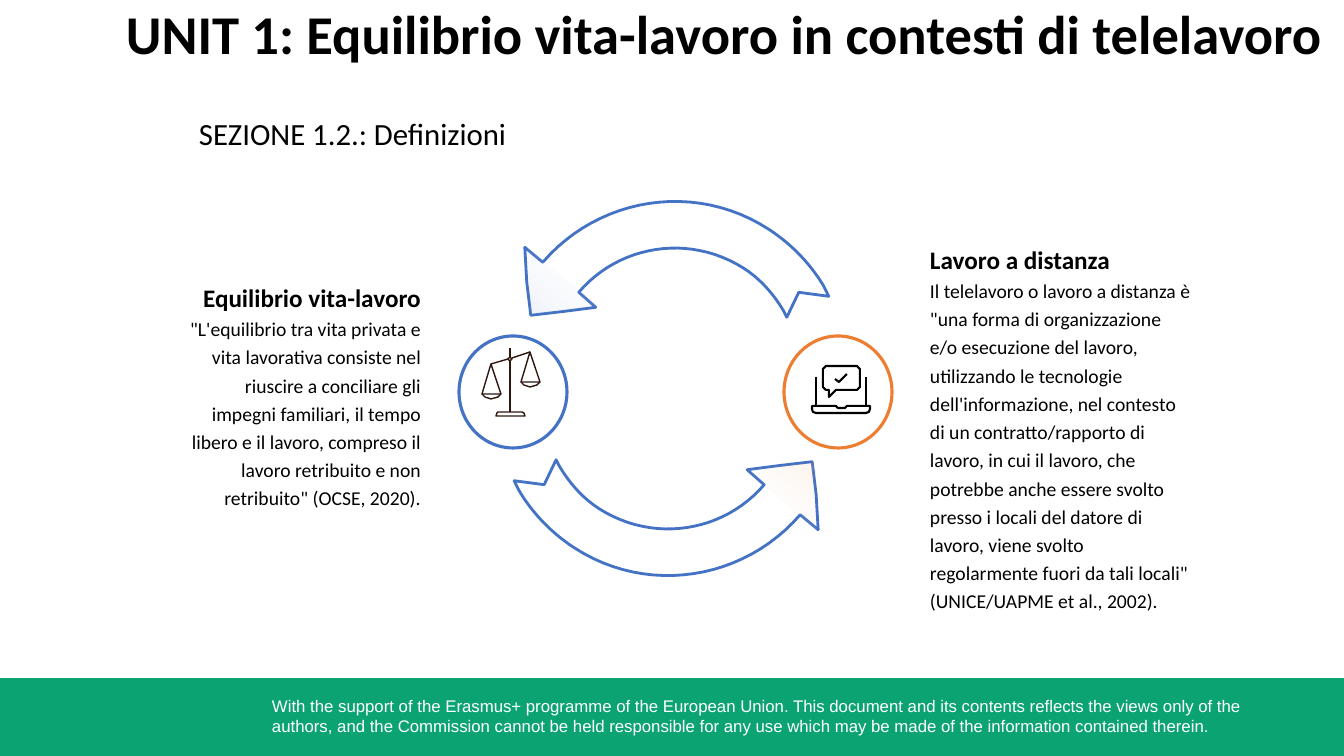
import math
from dataclasses import dataclass

import pptx
import pptx.dml.color
import pptx.enum.shapes
import pptx.enum.text
import pptx.oxml
import pptx.oxml.ns
import pptx.util

RGBColor = pptx.dml.color.RGBColor
SHAPE = pptx.enum.shapes.MSO_SHAPE
ALIGN = pptx.enum.text.PP_ALIGN

BLACK = RGBColor(0x00, 0x00, 0x00)
WHITE = RGBColor(0xFF, 0xFF, 0xFF)
GREEN = RGBColor(0x0C, 0xA3, 0x73)
BLUE = RGBColor(0x44, 0x72, 0xC4)
ORANGE = RGBColor(0xED, 0x7D, 0x31)
BROWN = RGBColor(0x2F, 0x16, 0x0F)

PAGE_WIDTH, PAGE_HEIGHT = 1344, 756
EMU_PER_PX = 12192000 / PAGE_WIDTH
ARROW_ANGLE = 333.1
CURVE_STEPS = 24

Point = tuple[float, float]


@dataclass(frozen=True)
class Definition:
    heading: str
    body: str
    area: tuple[int, int, int, int]
    align: ALIGN


@dataclass(frozen=True)
class Station:
    circle_left: int
    triangle_left: int
    triangle_top: int
    triangle_angle: float
    color: RGBColor


@dataclass(frozen=True)
class Stroke:
    points: list[Point]
    closed: bool = False


DEFINITIONS = [
    Definition(
        "Lavoro a distanza",
        "Il telelavoro o lavoro a distanza è \"una forma di organizzazione e/o esecuzione del lavoro, "
        "utilizzando le tecnologie dell'informazione, nel contesto di un contratto/rapporto di lavoro, "
        "in cui il lavoro, che potrebbe anche essere svolto presso i locali del datore di lavoro, viene "
        "svolto regolarmente fuori da tali locali\" (UNICE/UAPME et al., 2002).",
        (930, 233, 262, 389), ALIGN.LEFT),
    Definition(
        "Equilibrio vita-lavoro",
        "\"L'equilibrio tra vita privata e vita lavorativa consiste nel riuscire a conciliare gli impegni "
        "familiari, il tempo libero e il lavoro, compreso il lavoro retribuito e non retribuito\" "
        "(OCSE, 2020).",
        (186, 271, 235, 246), ALIGN.RIGHT),
]
STATIONS = [Station(459, 501, 271, 220, BLUE), Station(784, 752, 457, 41, ORANGE)]

LAPTOP = [
    Stroke([(816, 377), (816, 406)]),
    Stroke([(866, 377), (866, 406)]),
    Stroke([(812, 406), (836, 406), (838, 408), (845, 408), (847, 406), (870, 406),
            (870, 409), (869, 412), (866, 413), (816, 413), (813, 412), (812, 409)], True),
    Stroke([(826, 366), (857, 366), (860, 369), (860, 387), (857, 390), (836, 390),
            (829, 397), (829, 390), (826, 390), (823, 387), (823, 369)], True),
    Stroke([(835, 379), (839, 382), (847, 374)]),
]
PAN = [(491, 364), (482, 394), (501, 394), (491, 364)]
BOWL = [(482, 394), (485, 397), (491, 399), (498, 397), (501, 394)]
BALANCE = [
    Stroke([(510, 348), (510, 357)]),
    Stroke([(510, 361), (510, 412)]),
    Stroke([(508, 359), (491, 364)]),
    Stroke([(512, 358), (530, 352)]),
    Stroke([(510, 357), (512, 359), (510, 361), (508, 359)], True),
    Stroke([(496, 416), (525, 416), (524, 413), (522, 412), (498, 412), (497, 413)], True),
] + [Stroke([(x + dx, y + dy) for x, y in part])
     for dx, dy in ((0, 0), (39, -12)) for part in (PAN, BOWL)]


def px(length: float) -> int:
    return round(length * EMU_PER_PX)


def curve(start: Point, first: Point, second: Point, end: Point) -> list[Point]:
    points = []
    for step in range(CURVE_STEPS + 1):
        t = step / CURVE_STEPS
        weights = ((1 - t) ** 3, 3 * t * (1 - t) ** 2, 3 * t * t * (1 - t), t ** 3)
        points.append(tuple(sum(w * p[axis] for w, p in zip(weights, (start, first, second, end)))
                            for axis in (0, 1)))
    return points


TOP_ARROW = [
    (527, 282), (525, 247),
    *curve((543, 262), (599, 197), (695, 181), (769, 229)),
    *curve((769, 229), (792, 244), (811, 264), (824, 286)),
    (829, 296), (799, 292), (787, 317),
    *curve((784, 311), (774, 294), (761, 279), (744, 268)),
    *curve((744, 268), (689, 233), (619, 245), (579, 292)),
    (596, 307), (565, 311), (531, 315),
]
BOTTOM_ARROW = [(1343 - x, 777 - y) for x, y in TOP_ARROW]


def turn(points: list[Point], center: Point, degrees: float) -> list[Point]:
    cos, sin = math.cos(math.radians(degrees)), math.sin(math.radians(degrees))
    offsets = [(x - center[0], y - center[1]) for x, y in points]
    return [(center[0] + x * cos - y * sin, center[1] + x * sin + y * cos) for x, y in offsets]


def style(shape, fill: RGBColor | None, line: RGBColor | None = None, weight: float = 1) -> None:
    shape.shadow.inherit = False
    if fill is None:
        shape.fill.background()
    else:
        shape.fill.solid()
        shape.fill.fore_color.rgb = fill
    if line is None:
        shape.line.fill.background()
    else:
        shape.line.color.rgb = line
        shape.line.width = pptx.util.Pt(weight)


def add_preset(page, kind, area: tuple[int, int, int, int], **look):
    shape = page.shapes.add_shape(kind, *map(px, area))
    style(shape, **look)
    return shape


def add_outline(page, strokes: list[Stroke], **look):
    builder = page.shapes.build_freeform(*map(px, strokes[0].points[0]), scale=1.0)
    for index, stroke in enumerate(strokes):
        points = [(px(x), px(y)) for x, y in stroke.points]
        if index:
            builder.move_to(*points[0])
        builder.add_line_segments(points[1:], close=stroke.closed)
    shape = builder.convert_to_shape()
    style(shape, **look)
    return shape


def add_arrow(page, points: list[Point], center: Point) -> None:
    upright = turn(points, center, -ARROW_ANGLE)
    arrow = add_outline(page, [Stroke(upright, True)], fill=WHITE, line=BLUE, weight=2)
    arrow.rotation = ARROW_ANGLE


def add_fading_triangle(page, station: Station) -> None:
    area = (station.triangle_left, station.triangle_top, 91, 49)
    triangle = add_preset(page, SHAPE.ISOSCELES_TRIANGLE, area, fill=None)
    triangle.rotation = station.triangle_angle
    stops = "".join(
        f'<a:gs pos="{position}"><a:srgbClr val="{color}"><a:alpha val="{alpha}"/></a:srgbClr></a:gs>'
        for position, color, alpha in ((0, station.color, 20000), (99000, WHITE, 0), (100000, WHITE, 0)))
    gradient = pptx.oxml.parse_xml(
        f'<a:gradFill {pptx.oxml.ns.nsdecls("a")} rotWithShape="1"><a:gsLst>{stops}</a:gsLst>'
        '<a:lin ang="5400000" scaled="0"/></a:gradFill>')
    properties = triangle.element.spPr
    properties.replace(properties.find(pptx.oxml.ns.qn("a:noFill")), gradient)


def add_text_box(page, area: tuple[int, int, int, int], insets: tuple[int, int, int, int]):
    frame = page.shapes.add_textbox(*map(px, area)).text_frame
    frame.word_wrap = True
    frame.auto_size = pptx.enum.text.MSO_AUTO_SIZE.SHAPE_TO_FIT_TEXT
    frame.margin_left, frame.margin_top, frame.margin_right, frame.margin_bottom = map(px, insets)
    return frame


def write(para, text: str, *, size: float, font: str = "Calibri", color: RGBColor = BLACK,
          bold: bool = False, align: ALIGN = ALIGN.LEFT, spacing: float = 1.0) -> None:
    para.alignment = align
    para.line_spacing = spacing
    span = para.add_run()
    span.text = text
    span.font.size = pptx.util.Pt(size)
    span.font.name = font
    span.font.bold = bold
    span.font.color.rgb = color


def main() -> None:
    deck = pptx.Presentation()
    deck.slide_width, deck.slide_height = px(PAGE_WIDTH), px(PAGE_HEIGHT)
    page = deck.slides.add_slide(deck.slide_layouts[6])

    add_preset(page, SHAPE.RECTANGLE, (0, 678, PAGE_WIDTH, 78), fill=GREEN)
    footer = add_text_box(page, (262, 691, 1050, 50), (10, 5, 10, 5))
    write(footer.paragraphs[0],
          "With the support of the Erasmus+ programme of the European Union. This document and its "
          "contents reflects the views only of the authors, and the Commission cannot be held "
          "responsible for any use which may be made of the information contained therein.",
          size=12, font="Arial", color=WHITE)

    add_arrow(page, TOP_ARROW, (665, 277))
    add_arrow(page, BOTTOM_ARROW, (678, 500))
    for definition in DEFINITIONS:
        frame = add_text_box(page, definition.area, (0, 5, 0, 5))
        write(frame.paragraphs[0], definition.heading, size=18, bold=True,
              align=definition.align, spacing=1.2)
        write(frame.add_paragraph(), definition.body, size=14, align=definition.align, spacing=1.2)
    for station in STATIONS:
        add_fading_triangle(page, station)
        add_preset(page, SHAPE.OVAL, (station.circle_left, 336, 108, 112),
                   fill=None, line=station.color, weight=2.25)
    add_outline(page, LAPTOP, fill=None, line=BLACK, weight=1.5)
    add_outline(page, BALANCE, fill=None, line=BROWN, weight=1)

    section = add_text_box(page, (198, 113, 673, 39), (1, 2, 0, 0))
    write(section.paragraphs[0], "SEZIONE 1.2.: Definizioni", size=22)
    title = add_text_box(page, (125, -1, 1371, 68), (1, 1, 0, 0))
    write(title.paragraphs[0], "UNIT 1: Equilibrio vita-lavoro in contesti di telelavoro",
          size=39, bold=True)

    deck.save("out.pptx")


if __name__ == "__main__":
    main()
